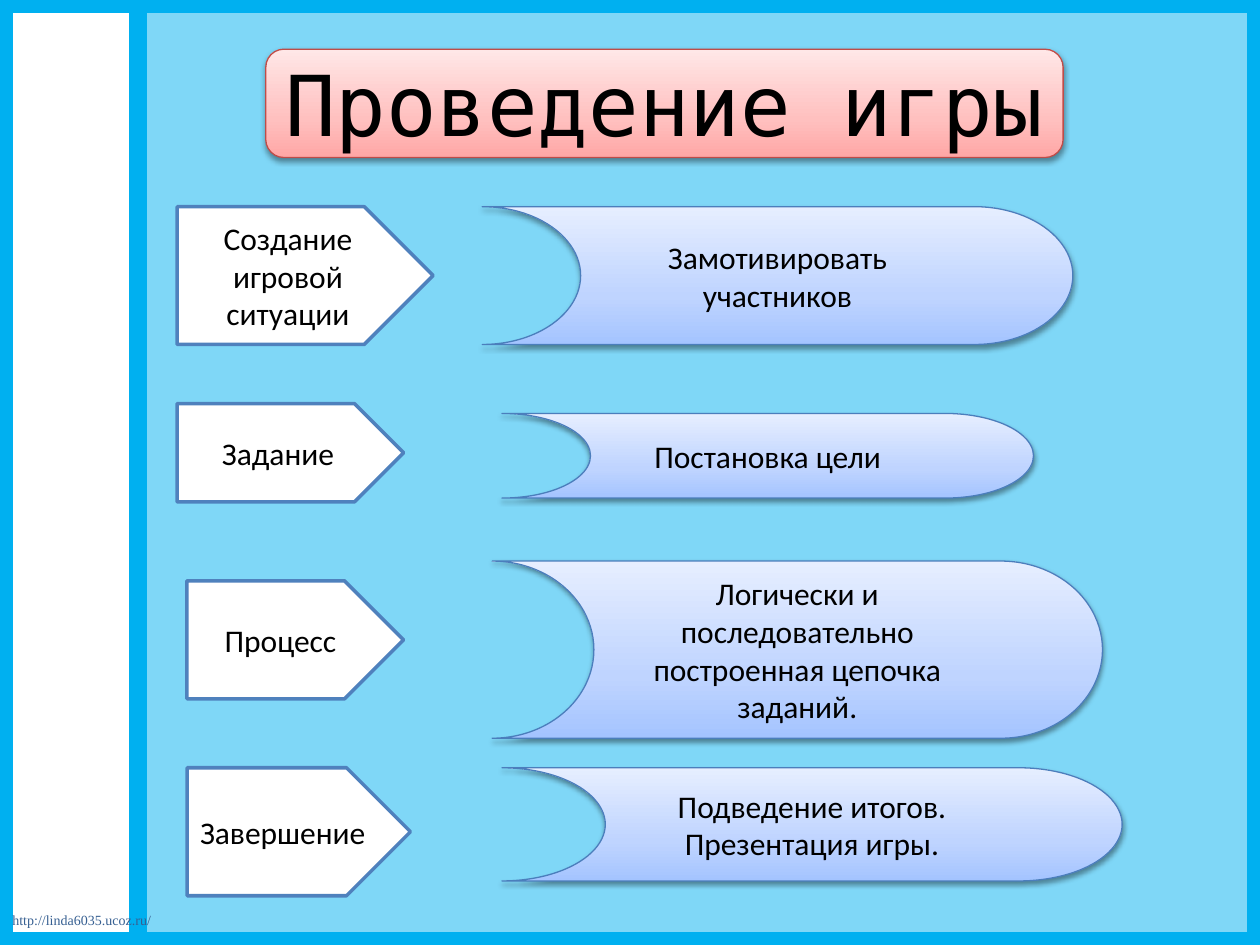
"""Build the slide on the stages of running a game."""
from typing import NamedTuple, Optional

from lxml import etree
from pptx import Presentation, util as u
from pptx.dml.color import RGBColor
from pptx.enum import shapes as sh, text as tx
from pptx.oxml.ns import qn

HUES = {
    "sky": "7FD7F7", "edge": "00B0F0", "white": "FFFFFF", "black": "000000",
    "link": "376092", "arrow": "4F81BD", "blue": "4B7EBC", "red": "BF4C48",
}
FADES = {
    "blue": ((0, "A4C4FF"), (35, "BFD4FF"), (100, "E6EEFF")),
    "red": ((0, "FFA6A5"), (35, "FFC0BF"), (100, "FFE7E7")),
}
WIDE, HIGH = u.Inches(10), u.Inches(7.5)
COLS, ROWS = 128, 96
KIND = sh.MSO_SHAPE


class Box(NamedTuple):
    """Place on the grid, in columns and rows."""
    col: float
    row: float
    wide: float
    high: float


class Look(NamedTuple):
    """Preset shape with its fill, outline and text style."""
    kind: sh.MSO_SHAPE
    line: str
    width: float
    fill: Optional[str] = None
    fade: Optional[str] = None
    flip: bool = False
    font: str = "Calibri"
    size: int = 18


class Stage(NamedTuple):
    """One step of the game and its aim."""
    name: str
    left: Box
    aim: str
    right: Box


PANEL = Look(KIND.RECTANGLE, "white", 2, fill="white")
FRAME = Look(KIND.RECTANGLE, "edge", 15)
TITLE = Look(KIND.ROUNDED_RECTANGLE, "red", 0.75, fade="red",
             font="DejaVu Sans Mono", size=48)
STEP = Look(KIND.PENTAGON, "arrow", 2, fill="white")
AIM = Look(KIND.FLOWCHART_STORED_DATA, "blue", 0.75, fade="blue", flip=True)

STAGES = (
    Stage("Создание игровой ситуации", Box(18, 21, 26, 14),
          "Замотивировать участников", Box(49, 21, 60, 14)),
    Stage("Задание", Box(18, 41, 23, 10),
          "Постановка цели", Box(51, 42, 54, 8.6)),
    Stage("Процесс", Box(19, 59, 22, 12),
          "Логически и последовательно построенная цепочка заданий.",
          Box(50, 57, 62, 18)),
    Stage("Завершение", Box(19, 78, 22.7, 13),
          "Подведение итогов. Презентация игры.", Box(51, 78, 63, 11.5)),
)


def hue(name: str) -> RGBColor:
    """Look up a colour by name."""
    return RGBColor.from_string(HUES[name])


def place(box: Box) -> tuple[int, int, int, int]:
    """Turn grid units into lengths."""
    col, row = WIDE / COLS, HIGH / ROWS
    return (round(box.col * col), round(box.row * row),
            round(box.wide * col), round(box.high * row))


def node(root, tag: str, **attrs):
    """Add a drawing element under root."""
    return etree.SubElement(root, qn(f"a:{tag}"),
                            {key: str(val) for key, val in attrs.items()})


def tint(shape, name: str) -> None:
    """Give a shape a rising three-stop gradient."""
    shape.fill.gradient()
    shape.fill.gradient_angle = 90
    stops = shape._element.spPr.find(qn("a:gradFill")).find(qn("a:gsLst"))
    for stop in list(stops):
        stops.remove(stop)
    for pos, code in FADES[name]:
        node(node(stops, "gs", pos=pos * 1000), "srgbClr", val=code)


def shade(shape) -> None:
    """Cast a soft shadow straight down."""
    root = shape._element.spPr.find(qn("a:effectLst"))
    cast = node(root, "outerShdw", blurRad=u.Pt(3.1), dist=u.Pt(1.6),
                dir=5400000, rotWithShape=0)
    node(node(cast, "srgbClr", val=HUES["black"]), "alpha", val=38000)


def write(para, words: str, font: str, size: int, ink: str) -> None:
    """Add one styled run to a paragraph."""
    run = para.add_run()
    run.text = words
    run.font.name, run.font.size = font, u.Pt(size)
    run.font.color.rgb = hue(ink)


def draw(slide, box: Box, look: Look, words: str = "") -> None:
    """Draw a shape in the given look, with centred words."""
    shape = slide.shapes.add_shape(look.kind, *place(box))
    shape.shadow.inherit = False
    shape.line.color.rgb = hue(look.line)
    shape.line.width = u.Pt(look.width)
    if look.fade:
        tint(shape, look.fade)
        shade(shape)
    elif look.fill:
        shape.fill.solid()
        shape.fill.fore_color.rgb = hue(look.fill)
    else:
        shape.fill.background()
    if look.flip:
        shape._element.spPr.xfrm.set("flipH", "1")
    if words:
        frame = shape.text_frame
        frame.word_wrap = True
        frame.vertical_anchor = tx.MSO_ANCHOR.MIDDLE
        para = frame.paragraphs[0]
        para.alignment = tx.PP_ALIGN.CENTER
        write(para, words, look.font, look.size, "black")


def rule(slide, col: float) -> None:
    """Draw a full-height bar at a column."""
    left = round(WIDE * col / COLS)
    bar = slide.shapes.add_connector(sh.MSO_CONNECTOR.STRAIGHT,
                                     left, 0, left, HIGH)
    bar.line.color.rgb = hue("edge")
    bar.line.width = u.Pt(10)
    node(bar._element.spPr, "effectLst")


def label(slide, box: Box, words: str) -> None:
    """Write the small address line."""
    frame = slide.shapes.add_textbox(*place(box)).text_frame
    frame.word_wrap = True
    write(frame.paragraphs[0], words, "Times New Roman", 8, "link")


def main() -> None:
    """Lay out and save the slide."""
    deck = Presentation()
    deck.slide_width, deck.slide_height = WIDE, HIGH
    slide = deck.slides.add_slide(deck.slide_layouts[6])
    back = slide.background.fill
    back.solid()
    back.fore_color.rgb = hue("sky")
    draw(slide, Box(0, 0, 14, ROWS), PANEL)
    rule(slide, 14)
    draw(slide, Box(0, 0, COLS, ROWS), FRAME)
    label(slide, Box(0, 92, 18, 3), "http://linda6035.ucoz.ru/")
    draw(slide, Box(27, 5, 81, 11), TITLE, "Проведение игры")
    for stage in STAGES:
        draw(slide, stage.left, STEP, stage.name)
        draw(slide, stage.right, AIM, stage.aim)
    deck.save("out.pptx")


if __name__ == "__main__":
    main()
